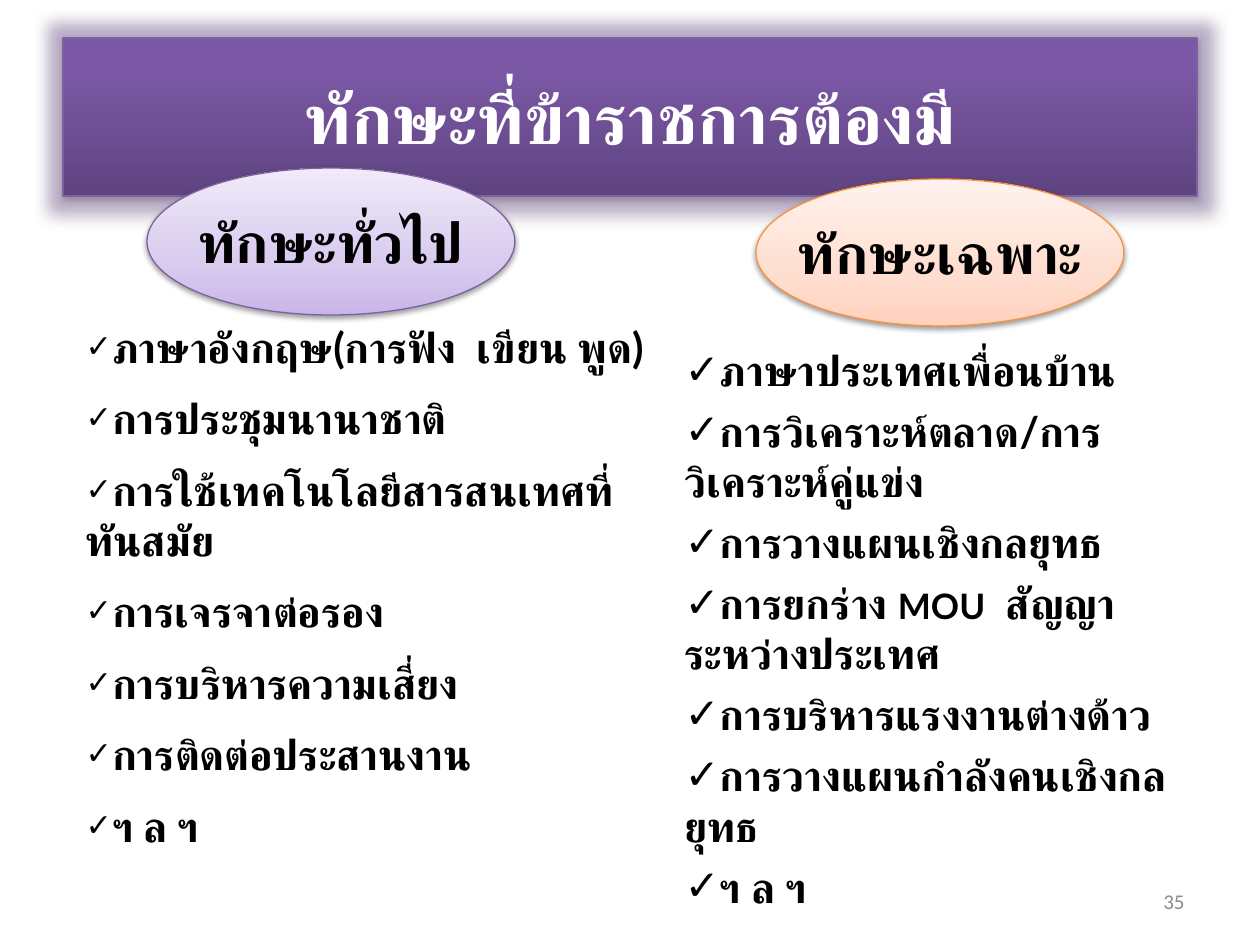
from dataclasses import dataclass

import pptx
import pptx.dml.color
import pptx.enum.shapes
import pptx.enum.text
import pptx.oxml
import pptx.oxml.ns
import pptx.util
from lxml import etree

EMU_PER_PX = 914400 / 126
FONT = "Lato"
COLOURS = {
    "white": "FFFFFF",
    "black": "000000",
    "grey": "8C8C8C",
    "purple": "7D60A0",
    "glow": "8064A2",
    "orange": "F69240",
}
ALIGN = pptx.enum.text.PP_ALIGN
MIDDLE = pptx.enum.text.MSO_ANCHOR.MIDDLE
AUTO_SIZE = pptx.enum.text.MSO_AUTO_SIZE


@dataclass
class Area:
    left: int
    top: int
    width: int
    height: int

    def emu(self) -> list:
        lengths = (self.left, self.top, self.width, self.height)
        return [pptx.util.Emu(round(n * EMU_PER_PX)) for n in lengths]


@dataclass
class Look:
    stops: list  # (position in percent, colour), from the bottom up
    line: str
    shadow_alpha: int
    glow_px: int = 0


@dataclass
class Skill:
    heading: str
    oval: Area
    look: Look
    body: Area
    bullet_percent: int
    gap_percent: int  # space before each item, in percent of a line
    items: list  # each item is a list of (text, size) spans


def add_node(parent, tag: str, **attributes):
    node = etree.SubElement(parent, pptx.oxml.ns.qn(tag))
    for name, value in attributes.items():
        node.set(name, str(value))
    return node


def place(shape, area: Area) -> None:
    shape.left, shape.top, shape.width, shape.height = area.emu()


def add_span(para, text: str, size: int, colour: str, font: str = FONT, bold: bool = True) -> None:
    span = para.add_run()
    span.text = text
    span.font.size = pptx.util.Pt(size)
    span.font.bold = bold
    span.font.name = font
    span.font.color.rgb = pptx.dml.color.RGBColor.from_string(COLOURS[colour])
    # Thai letters take the complex-script font
    add_node(span.font._element, "a:cs", typeface=font)


def add_colour(parent, colour: str, alpha: int) -> None:
    node = add_node(parent, "a:srgbClr", val=COLOURS[colour])
    add_node(node, "a:alpha", val=alpha * 1000)


def style_shape(shape, look: Look) -> None:
    # Gradient running upwards
    shape.fill.gradient()
    shape.fill.gradient_angle = 90
    properties = shape._element.spPr
    stop_list = properties.find(".//" + pptx.oxml.ns.qn("a:gsLst"))
    for old_stop in list(stop_list):
        stop_list.remove(old_stop)
    for position, colour in look.stops:
        stop = add_node(stop_list, "a:gs", pos=position * 1000)
        add_node(stop, "a:srgbClr", val=colour)

    shape.line.color.rgb = pptx.dml.color.RGBColor.from_string(COLOURS[look.line])
    shape.line.width = pptx.util.Pt(0.75)

    # Glow and soft shadow
    effects = add_node(properties, "a:effectLst")
    if look.glow_px:
        glow = add_node(effects, "a:glow", rad=round(look.glow_px * EMU_PER_PX))
        add_colour(glow, "glow", 40)
    shadow = add_node(effects, "a:outerShdw", blurRad=pptx.util.Pt(3.1),
                      dist=pptx.util.Pt(1.7), dir=5400000, rotWithShape=0)
    add_colour(shadow, "black", look.shadow_alpha)


def fill_list(box, skill: Skill) -> None:
    place(box, skill.body)
    frame = box.text_frame
    frame.word_wrap = True
    frame.auto_size = AUTO_SIZE.SHAPE_TO_FIT_TEXT
    for index, spans in enumerate(skill.items):
        para = frame.paragraphs[0] if index == 0 else frame.add_paragraph()
        layout = para._p.get_or_add_pPr()
        layout.set("marL", "0")
        layout.set("indent", "0")
        before = add_node(layout, "a:spcBef")
        add_node(before, "a:spcPct", val=skill.gap_percent * 1000)
        add_node(layout, "a:buSzPct", val=skill.bullet_percent * 1000)
        add_node(layout, "a:buChar", char="✓")
        for text, size in spans:
            add_span(para, text, size, "black")


def add_oval(page, skill: Skill) -> None:
    oval = page.shapes.add_shape(pptx.enum.shapes.MSO_SHAPE.OVAL, *skill.oval.emu())
    style_shape(oval, skill.look)
    frame = oval.text_frame
    frame.word_wrap = False
    frame.vertical_anchor = MIDDLE
    para = frame.paragraphs[0]
    para.alignment = ALIGN.CENTER
    add_span(para, skill.heading, 32, "black")


def add_title(title) -> None:
    place(title, Area(63, 38, 1134, 158))
    style_shape(title, Look([(0, "5F4480"), (80, "7B58A6"), (100, "7C57A8")], "purple", 35, 32))
    title.text_frame.vertical_anchor = MIDDLE
    para = title.text_frame.paragraphs[0]
    para.alignment = ALIGN.CENTER
    add_span(para, "ทักษะที่ข้าราชการต้องมี", 40, "white")


def add_page_number(page, number: str) -> None:
    box = page.shapes.add_textbox(*Area(903, 876, 294, 50).emu())
    box.text_frame.word_wrap = True
    box.text_frame.vertical_anchor = MIDDLE
    para = box.text_frame.paragraphs[0]
    para.alignment = ALIGN.RIGHT
    add_span(para, number, 12, "grey", "Calibri", False)


SKILLS = [
    Skill(
        "ทักษะทั่วไป", Area(147, 168, 368, 147),
        Look([(0, "C9B5E8"), (35, "D8CBEE"), (100, "F0EAF9")], "purple", 38),
        Area(73, 315, 588, 532), 75, 50,
        [
            [("ภาษาอังกฤษ(การฟัง  เขียน พูด)", 24)],
            [("การประชุมนานาชาติ", 24)],
            [("การใช้เทคโนโลยีสารสนเทศที่ทันสมัย", 24)],
            [("การเจรจาต่อรอง", 24)],
            [("การบริหารความเสี่ยง", 24)],
            [("การติดต่อประสานงาน", 24)],
            [("ฯ ล ฯ", 24)],
        ],
    ),
    # Longer list: tighter gaps keep its last item on the page
    Skill(
        "ทักษะเฉพาะ", Area(756, 179, 368, 147),
        Look([(0, "FFD2BD"), (35, "FFDED0"), (100, "FFF2ED")], "orange", 38),
        Area(672, 338, 546, 590), 100, 25,
        [
            [("ภาษาประเทศเพื่อนบ้าน", 24)],
            [("การวิเคราะห์ตลาด/การวิเคราะห์คู่แข่ง", 24)],
            [("การวางแผนเชิงกลยุทธ", 24)],
            [("การยกร่าง ", 24), ("MOU", 20), ("  สัญญาระหว่างประเทศ", 24)],
            [("การบริหารแรงงานต่างด้าว", 24)],
            [("การวางแผนกำลังคนเชิงกลยุทธ", 24)],
            [("ฯ ล ฯ", 24)],
        ],
    ),
]


def main() -> None:
    deck = pptx.Presentation()
    deck.slide_width, deck.slide_height = Area(0, 0, 1260, 945).emu()[2:]
    page = deck.slides.add_slide(deck.slide_layouts[3])  # title and two lists

    add_title(page.shapes.title)
    add_page_number(page, "35")
    for position, skill in enumerate(SKILLS, start=1):
        fill_list(page.placeholders[position], skill)
        add_oval(page, skill)

    deck.save("out.pptx")


if __name__ == "__main__":
    main()
